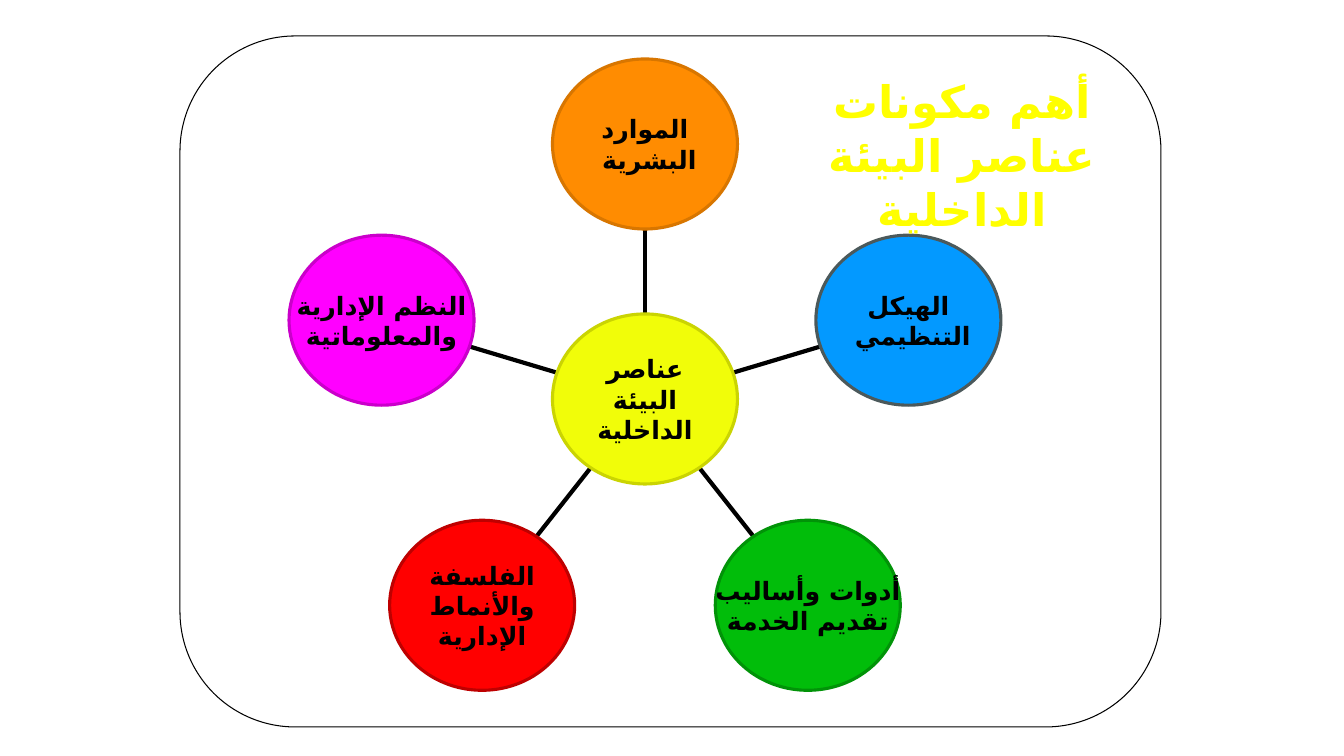
import math
import lxml.etree
import pptx
import pptx.util
import pptx.dml.color
import pptx.enum.shapes
import pptx.enum.text
import pptx.oxml.ns

RGB = pptx.dml.color.RGBColor
SHAPES = pptx.enum.shapes.MSO_SHAPE
BLACK = RGB(0, 0, 0)
YELLOW = RGB(255, 255, 0)
FONT = "DejaVu Sans"

HEADING = "أهم مكونات عناصر البيئة الداخلية"
HUB = (["عناصر", " البيئة ", "الداخلية"], True, RGB(0xF1, 0xFD, 0x09), RGB(0xCA, 0xD4, 0x02))
ELEMENTS = [
    (["الموارد", " البشرية"], False, RGB(0xFF, 0x8C, 0x01), RGB(0xD8, 0x76, 0x00)),
    (["الهيكل", " التنظيمي"], False, RGB(0x03, 0x99, 0xFF), RGB(0x4B, 0x59, 0x5B)),
    (["أدوات وأساليب", "تقديم الخدمة"], True, RGB(0x01, 0xBD, 0x0A), RGB(0x01, 0x93, 0x08)),
    (["الفلسفة", " والأنماط ", "الإدارية"], False, RGB(0xFF, 0, 0), RGB(0xBE, 0, 0)),
    (["النظم الإدارية", "والمعلوماتية"], False, RGB(0xFF, 0, 0xFF), RGB(0xCA, 0, 0xCA)),
]

SLIDE_SIZE = (1344, 756)
FRAME = (180, 36, 981, 691)
HEADING_BOX = (807, 69, 310, 172)
HUB_CENTRE = (645, 399)
CIRCLE = (185, 170)
ORBIT = (277, 255)


def px(length):
    """Turn pixels into EMU."""
    return round(length * 12192000 / SLIDE_SIZE[0])


def orbit_point(angle, share):
    """Return the point at a share of the way from the hub to an element."""
    return (HUB_CENTRE[0] + share * ORBIT[0] * math.sin(angle),
            HUB_CENTRE[1] - share * ORBIT[1] * math.cos(angle))


def write(paragraph, words, size, color, rtl):
    """Add one centred bold run to a paragraph."""
    paragraph.alignment = pptx.enum.text.PP_ALIGN.CENTER
    paragraph.line_spacing = 1.0
    paragraph._p.get_or_add_pPr().set("rtl", str(int(rtl)))
    run = paragraph.add_run()
    run.text = words
    run.font.size = pptx.util.Pt(size)
    run.font.bold = True
    run.font.color.rgb = color
    run.font.name = FONT
    script_font = lxml.etree.SubElement(run.font._element, pptx.oxml.ns.qn("a:cs"))
    script_font.set("typeface", FONT)


def add_frame(slide):
    """Draw the rounded outline around the diagram."""
    frame = slide.shapes.add_shape(SHAPES.FLOWCHART_ALTERNATE_PROCESS, *map(px, FRAME))
    frame.shadow.inherit = False
    frame.fill.background()
    frame.line.color.rgb = BLACK
    frame.line.width = pptx.util.Pt(0.75)


def add_link(slide, angle):
    """Join the hub's edge to an element's edge."""
    ends = orbit_point(angle, 1 / 3) + orbit_point(angle, 2 / 3)
    link = slide.shapes.add_connector(
        pptx.enum.shapes.MSO_CONNECTOR.STRAIGHT, *map(px, ends))
    link.line.color.rgb = BLACK
    link.line.width = pptx.util.Pt(3)
    lxml.etree.SubElement(link._element.spPr, pptx.oxml.ns.qn("a:effectLst"))


def add_circle(slide, centre, lines, rtl, fill, outline):
    """Draw one labelled circle."""
    corner = [middle - extent / 2 for middle, extent in zip(centre, CIRCLE)]
    circle = slide.shapes.add_shape(SHAPES.OVAL, *map(px, (*corner, *CIRCLE)))
    circle.shadow.inherit = False
    circle.fill.solid()
    circle.fill.fore_color.rgb = fill
    circle.line.color.rgb = outline
    circle.line.width = pptx.util.Pt(2.25)
    label = circle.text_frame
    label.word_wrap = False
    label.vertical_anchor = pptx.enum.text.MSO_ANCHOR.MIDDLE
    label.margin_left = label.margin_right = px(15)
    label.margin_top = label.margin_bottom = px(8)
    for index, words in enumerate(lines):
        paragraph = label.add_paragraph() if index else label.paragraphs[0]
        write(paragraph, words, 18, BLACK, rtl)


def add_heading(slide):
    """Place the title above the other parts."""
    heading = slide.shapes.title
    heading.left, heading.top, heading.width, heading.height = map(px, HEADING_BOX)
    heading.text_frame.word_wrap = True
    heading.text_frame.auto_size = pptx.enum.text.MSO_AUTO_SIZE.NONE
    heading.text_frame.vertical_anchor = pptx.enum.text.MSO_ANCHOR.TOP
    write(heading.text_frame.paragraphs[0], HEADING, 32, YELLOW, True)
    slide.shapes._spTree.append(heading._element)


def main():
    """Build and save the slide."""
    deck = pptx.Presentation()
    deck.slide_width, deck.slide_height = map(px, SLIDE_SIZE)
    slide = deck.slides.add_slide(deck.slide_layouts[5])
    add_frame(slide)
    for index, element in enumerate(ELEMENTS):
        angle = index * math.tau / len(ELEMENTS)
        add_link(slide, angle)
        add_circle(slide, orbit_point(angle, 1), *element)
    add_circle(slide, HUB_CENTRE, *HUB)
    add_heading(slide)
    deck.save("out.pptx")


if __name__ == "__main__":
    main()
